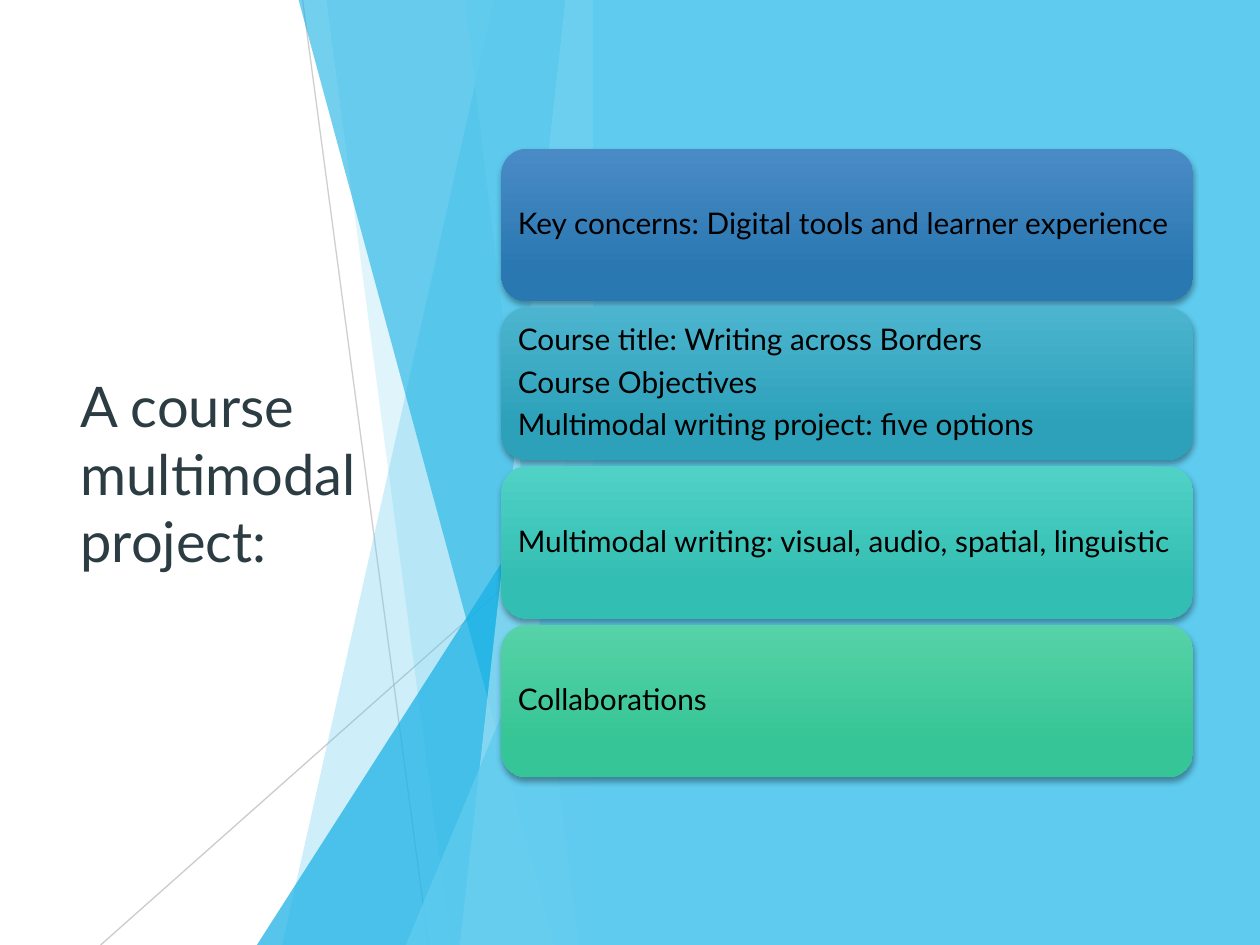
import pptx
import pptx.dml.color
import pptx.enum.shapes
import pptx.enum.text
import pptx.oxml.ns
import pptx.util
from dataclasses import dataclass
from lxml import etree

Cm = pptx.util.Cm
Pt = pptx.util.Pt
RGB = pptx.dml.color.RGBColor.from_string
qn = pptx.oxml.ns.qn
SHAPE = pptx.enum.shapes.MSO_SHAPE
ALIGN = pptx.enum.text.PP_ALIGN
ANCHOR = pptx.enum.text.MSO_ANCHOR


@dataclass
class Theme:
    font: str = "Lato"
    background: str = "FFFFFF"
    title: str = "2C3C43"
    text: str = "000000"
    sky: str = "5FCBEF"
    azure: str = "17B0E4"
    pale: str = "9FE0F5"
    rule: str = "BFBFBF"
    shadow: str = "000000"
    title_size: int = 32
    text_size: int = 17


theme = Theme()
WIDTH, HEIGHT, EDGE = 25.4, 19.05, 11.96  # EDGE: left side of the blue panel


def set_opacity(shape, percent):
    color = shape._element.spPr.find(".//" + qn("a:srgbClr"))
    etree.SubElement(color, qn("a:alpha"), val=str(percent * 1000))


def paint(shape, color):
    shape.fill.solid()
    shape.fill.fore_color.rgb = RGB(color)
    shape.line.fill.background()
    shape.shadow.inherit = False


deck = pptx.Presentation()
deck.slide_width, deck.slide_height = Cm(WIDTH), Cm(HEIGHT)
page = deck.slides.add_slide(deck.slide_layouts[5])
page.background.fill.solid()
page.background.fill.fore_color.rgb = RGB(theme.background)

# Thin rules behind the facets
rules = [(6.1, 0, 8.64, HEIGHT, 75), (EDGE, 10.24, 2.03, HEIGHT, 80)]
for x1, y1, x2, y2, opacity in rules:
    rule = page.shapes.add_connector(
        pptx.enum.shapes.MSO_CONNECTOR.STRAIGHT, Cm(x1), Cm(y1), Cm(x2), Cm(y2))
    rule.line.color.rgb = RGB(theme.rule)
    rule.line.width = Pt(0.75)
    set_opacity(rule, opacity)
    etree.SubElement(rule._element.spPr, qn("a:effectLst"))

# Translucent facets: top corner x and y, foot x, colour, opacity
facets = [
    (9.96, 0, 5.69, theme.sky, 30),
    (6.58, 0, 9.09, theme.sky, 20),
    (EDGE, 8.46, 5.18, theme.azure, 72),
    (6.02, 0, 11.18, theme.azure, 60),
    (11.4, 0, 9.27, theme.pale, 70),
    (9.37, 0, 11.66, theme.sky, 65),
    (EDGE, 9.98, 8.18, theme.sky, 80),
]
for top_x, top_y, foot_x, color, opacity in facets:
    if top_x == EDGE:
        facet = page.shapes.add_shape(
            SHAPE.ISOSCELES_TRIANGLE, Cm(foot_x), Cm(top_y),
            Cm(EDGE - foot_x), Cm(HEIGHT - top_y))
        facet.adjustments[0] = 1
    else:
        outline = page.shapes.build_freeform(Cm(top_x), Cm(top_y))
        outline.add_line_segments([
            (Cm(EDGE), Cm(top_y)), (Cm(EDGE), Cm(HEIGHT)), (Cm(foot_x), Cm(HEIGHT))])
        facet = outline.convert_to_shape()
    paint(facet, color)
    set_opacity(facet, opacity)

# Title, raised above the facets
title = page.shapes.title
title.left, title.top, title.width, title.height = Cm(1.37), Cm(3.84), Cm(7.39), Cm(11.38)
title.text_frame.text = "A course multimodal project:"
title.text_frame.word_wrap = True
title.text_frame.auto_size = pptx.enum.text.MSO_AUTO_SIZE.NONE
title.text_frame.vertical_anchor = ANCHOR.MIDDLE
heading = title.text_frame.paragraphs[0]
heading.alignment = ALIGN.LEFT
heading.font.name = theme.font
heading.font.size = Pt(theme.title_size)
heading.font.color.rgb = RGB(theme.title)
page.shapes._spTree.append(title._element)

# Blue panel
panel = page.shapes.add_shape(
    SHAPE.RECTANGLE, Cm(EDGE), 0, Cm(WIDTH - EDGE), Cm(HEIGHT))
paint(panel, theme.sky)

# Cards: upper colour, lower colour, lines of text
cards = [
    ("4A8BC6", "2A78B2", ["Key concerns: Digital tools and learner experience"]),
    ("4CB4CE", "2DA1BA", ["Course title: Writing across Borders",
                          "Course Objectives",
                          "Multimodal writing project: five options"]),
    ("50D1C6", "33BEB3", ["Multimodal writing: visual, audio, spatial, linguistic"]),
    ("56D2A7", "36C596", ["Collaborations"]),
]
for index, (upper, lower, lines) in enumerate(cards):
    card = page.shapes.add_shape(
        SHAPE.ROUNDED_RECTANGLE, Cm(10.11), Cm(3 + 3.2 * index), Cm(13.94), Cm(3.07))
    card.fill.gradient()
    card.fill.gradient_angle = 270
    for stop, color, position in zip(card.fill.gradient_stops, (upper, lower), (0, 0.78)):
        stop.color.rgb = RGB(color)
        stop.position = position
    card.line.fill.background()

    # Soft shadow below the card
    card.shadow.inherit = False
    effects = card._element.spPr.find(qn("a:effectLst"))
    shadow = etree.SubElement(
        effects, qn("a:outerShdw"), blurRad=str(Pt(3)), dist=str(Pt(2)),
        dir="5400000", rotWithShape="0")
    shade = etree.SubElement(shadow, qn("a:srgbClr"), val=theme.shadow)
    etree.SubElement(shade, qn("a:alpha"), val="35000")

    # Card text
    frame = card.text_frame
    frame.word_wrap = True
    frame.vertical_anchor = ANCHOR.MIDDLE
    frame.margin_left = frame.margin_right = Cm(0.18)
    frame.margin_top = frame.margin_bottom = Cm(0.18)
    frame.text = "\n".join(lines)
    for para in frame.paragraphs:
        para.alignment = ALIGN.LEFT
        para.line_spacing = 0.9
        para.space_after = Pt(6)
        para.font.name = theme.font
        para.font.size = Pt(theme.text_size)
        para.font.color.rgb = RGB(theme.text)

deck.save("out.pptx")
